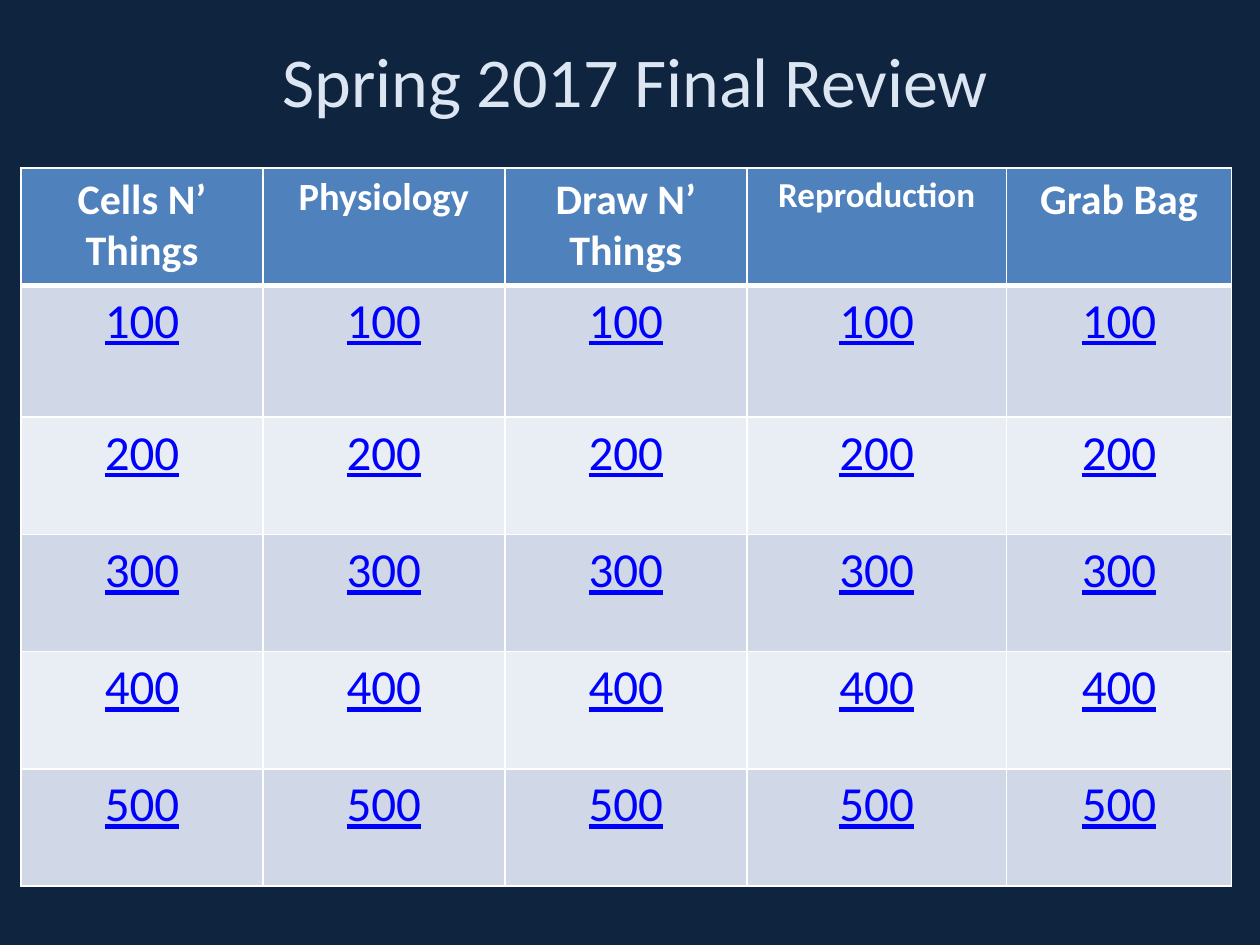
import dataclasses

import pptx
import pptx.dml.color
import pptx.enum.text
import pptx.oxml
import pptx.oxml.ns
import pptx.util

Pt = pptx.util.Pt


@dataclasses.dataclass(frozen=True)
class Theme:
    font: str = "Calibri"
    background: str = "0F243E"
    title: str = "DCE6F2"
    header_fill: str = "4F81BD"
    header_text: str = "FFFFFF"
    bands: tuple = ("D0D8E8", "E9EDF4")
    points: str = "0000FF"
    border: str = "FFFFFF"
    title_size: int = 40
    points_size: int = 28


theme = Theme()
CATEGORIES = [  # heading, type size, column width
    ("Cells N’ Things", 24, 138.25),
    ("Physiology", 22, 138.25),
    ("Draw N’ Things", 24, 138.25),
    ("Reproduction", 20, 148.5),
    ("Grab Bag", 24, 128.5),
]
POINTS = [100, 200, 300, 400, 500]
ROW_HEIGHTS = [67, 75.4, 67, 67, 67, 67]


def write(frame, text, size, color):
    """Put one centred line of text in the frame and return its font."""
    paragraph = frame.paragraphs[0]
    paragraph.text = text
    paragraph.alignment = pptx.enum.text.PP_ALIGN.CENTER
    font = paragraph.font
    font.name = theme.font
    font.size = Pt(size)
    font.color.rgb = pptx.dml.color.RGBColor.from_string(color)
    return font


def style_cell(cell, fill, top, bottom):
    """Fill the cell and draw its borders; top and bottom are line widths."""
    properties = cell._tc.get_or_add_tcPr()
    for tag, width in (("lnL", 1), ("lnR", 1), ("lnT", top), ("lnB", bottom)):
        properties.append(pptx.oxml.parse_xml(
            f'<a:{tag} {pptx.oxml.ns.nsdecls("a")} w="{Pt(width)}"><a:solidFill>'
            f'<a:srgbClr val="{theme.border}"/></a:solidFill></a:{tag}>'))
    cell.fill.solid()
    cell.fill.fore_color.rgb = pptx.dml.color.RGBColor.from_string(fill)


presentation = pptx.Presentation()
presentation.slide_width, presentation.slide_height = Pt(720), Pt(540)
slide = presentation.slides.add_slide(presentation.slide_layouts[6])
slide.background.fill.solid()
slide.background.fill.fore_color.rgb = pptx.dml.color.RGBColor.from_string(theme.background)

title = slide.shapes.add_textbox(Pt(60), Pt(18), Pt(606), Pt(54))
title.text_frame.word_wrap = True
write(title.text_frame, "Spring 2017 Final Review", theme.title_size, theme.title)

board = slide.shapes.add_table(
    len(ROW_HEIGHTS), len(CATEGORIES), Pt(12), Pt(96),
    Pt(sum(width for _, _, width in CATEGORIES)), Pt(sum(ROW_HEIGHTS))).table
for row, height in zip(board.rows, ROW_HEIGHTS):
    row.height = Pt(height)

for column, (heading, size, width) in enumerate(CATEGORIES):
    board.columns[column].width = Pt(width)
    header = board.cell(0, column)
    write(header.text_frame, heading, size, theme.header_text).bold = True
    style_cell(header, theme.header_fill, top=1, bottom=3)
    for index, points in enumerate(POINTS):
        cell = board.cell(index + 1, column)
        font = write(cell.text_frame, str(points), theme.points_size, theme.points)
        font.underline = True
        style_cell(cell, theme.bands[index % 2], top=3 if index == 0 else 1, bottom=1)

presentation.save("out.pptx")
